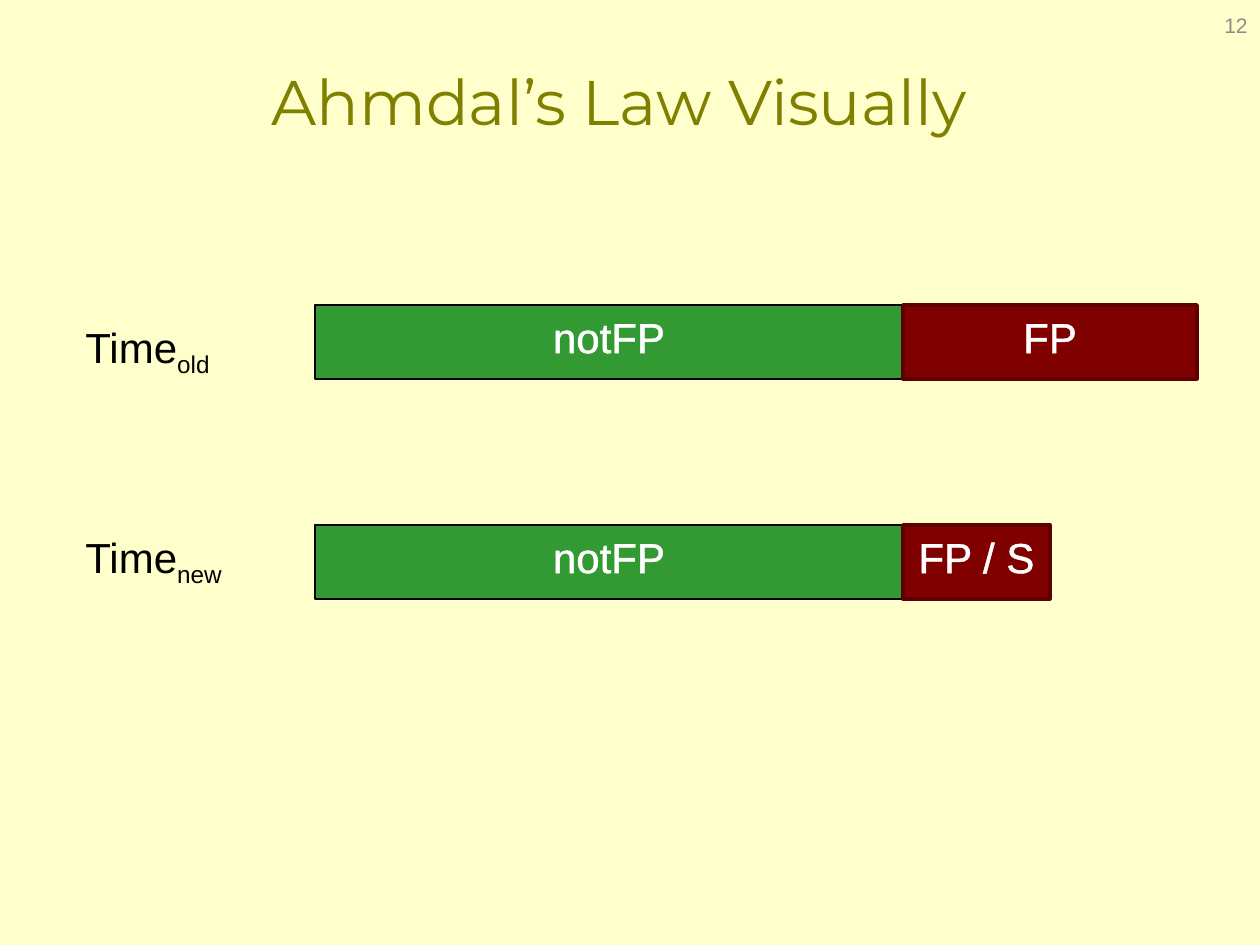
from lxml.etree import SubElement
from pptx import Presentation
from pptx.dml.color import RGBColor
from pptx.enum.shapes import MSO_SHAPE as Shape
from pptx.enum.text import MSO_ANCHOR as Anchor, MSO_AUTO_SIZE as AutoSize, PP_ALIGN as Align
from pptx.oxml import parse_xml
from pptx.oxml.ns import nsdecls
from pptx.util import Emu, Pt

PX = 914400 / 126
TEXT_OUTLINE = (f'<a:ln {nsdecls("a")} w="18415"><a:solidFill>'
                '<a:srgbClr val="FFFFFF"/></a:solidFill></a:ln>')


def px(*lengths):
    """Turn pixel lengths into EMU."""
    return [Emu(round(length * PX)) for length in lengths]


def format_runs(paragraph, size, color, font="Arial", align=Align.LEFT):
    paragraph.alignment = align
    for run in paragraph.runs:
        run.font.size = Pt(size)
        run.font.name = font
        run.font.color.rgb = RGBColor.from_string(color)


presentation = Presentation()
presentation.slide_width, presentation.slide_height = px(1260, 945)
slide = presentation.slides.add_slide(presentation.slide_layouts[5])
slide.background.fill.solid()
slide.background.fill.fore_color.rgb = RGBColor.from_string("FFFFCC")

# Title
title = slide.shapes.title
title.left, title.top, title.width, title.height = px(73, 21, 1092, 158)
title.text_frame.text = "Ahmdal’s Law Visually"
title.text_frame.vertical_anchor = Anchor.MIDDLE
format_runs(title.text_frame.paragraphs[0], 36, "808000", "Montserrat", Align.CENTER)

# Time bars: the part that stays the same, then the part that is sped up
BAR_LEFT, BAR_HEIGHT, NOT_FP_WIDTH, FP_WIDTH = 315, 74, 588, 294
rows = [
    ("old", 305, 315, 156, "FP", FP_WIDTH),
    ("new", 525, 525, 170, "FP / S", FP_WIDTH // 2),
]
for subscript, bar_top, label_top, label_width, fp_text, fp_width in rows:
    parts = [
        ("notFP", BAR_LEFT, NOT_FP_WIDTH, "339933", "000000", 0.75),
        (fp_text, BAR_LEFT + NOT_FP_WIDTH, fp_width, "800000", "5F0000", 2),
    ]
    for text, left, width, fill, line, line_width in parts:
        bar = slide.shapes.add_shape(Shape.RECTANGLE, *px(left, bar_top, width, BAR_HEIGHT))
        bar.shadow.inherit = False
        bar.fill.solid()
        bar.fill.fore_color.rgb = RGBColor.from_string(fill)
        bar.line.color.rgb = RGBColor.from_string(line)
        bar.line.width = Pt(line_width)
        bar.text_frame.text = text
        bar.text_frame.vertical_anchor = Anchor.TOP
        paragraph = bar.text_frame.paragraphs[0]
        format_runs(paragraph, 24, "FFFFFF", align=Align.CENTER)
        paragraph.runs[0].font._element.insert(0, parse_xml(TEXT_OUTLINE))

    label = slide.shapes.add_textbox(*px(73, label_top, label_width, 63))
    label.text_frame.word_wrap = False
    label.text_frame.auto_size = AutoSize.SHAPE_TO_FIT_TEXT
    paragraph = label.text_frame.paragraphs[0]
    paragraph.text = "Time"
    paragraph.add_run().text = subscript
    format_runs(paragraph, 24, "000000")
    paragraph.runs[1].font._element.set("baseline", "-25000")

# Slide number
number = slide.shapes.add_textbox(*px(966, 0, 294, 50))
number.text_frame.word_wrap = True
number.text_frame.vertical_anchor = Anchor.MIDDLE
number.text_frame.text = "12"
format_runs(number.text_frame.paragraphs[0], 12, "8C8C8C", align=Align.RIGHT)

presentation.save("out.pptx")
